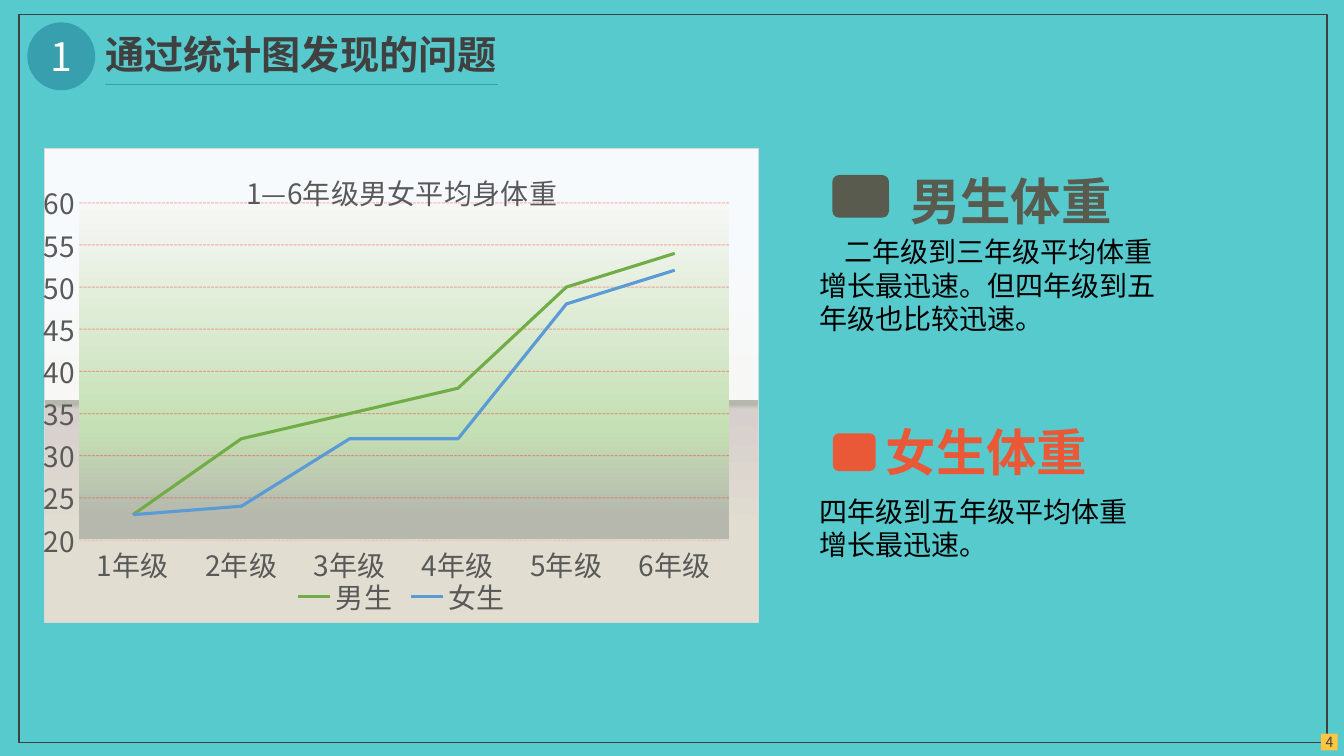
from lxml import etree
from pptx import Presentation
from pptx.chart.data import CategoryChartData as ChartData
from pptx.dml.color import RGBColor as RGB
from pptx.enum.chart import XL_CHART_TYPE as Kind, XL_LEGEND_POSITION as Spot, XL_TICK_MARK as Tick
from pptx.enum.dml import MSO_LINE as Dash
from pptx.enum.shapes import MSO_CONNECTOR as Wire, MSO_SHAPE as Form
from pptx.enum.text import MSO_ANCHOR as Anchor, PP_ALIGN as Align
from pptx.oxml import parse_xml
from pptx.oxml.ns import nsdecls, qn
from pptx.util import Pt

TEAL = RGB(0x57, 0xCA, 0xCD)
DEEP = RGB(0x38, 0x9F, 0xAE)
DARK = RGB(0x40, 0x40, 0x40)
GOLD = RGB(0xFD, 0xC5, 0x40)
MOSS = RGB(0x59, 0x5B, 0x4F)
CORAL = RGB(0xEA, 0x59, 0x37)
GRAY = RGB(0x59, 0x59, 0x59)
PALE = RGB(0xD9, 0xD9, 0xD9)
RED = RGB(0xFF, 0, 0)
GREEN = RGB(0x70, 0xAD, 0x47)
BLUE = RGB(0x5B, 0x9B, 0xD5)
BLACK = RGB(0, 0, 0)
WHITE = RGB(0xFF, 0xFF, 0xFF)
SANS = "Noto Sans CJK SC"
HEAD = "Noto Sans CJK JP"


def style(font, size, color, face=SANS, bold=False):
    font.size = Pt(size)
    font.bold = bold
    font.color.rgb = color
    font.name = face
    etree.SubElement(font._element, qn("a:ea")).set("typeface", face)


def draw(form, box, color):
    shape = slide.shapes.add_shape(form, *map(Pt, box))
    shape.shadow.inherit = False
    shape.line.fill.background()
    shape.fill.solid()
    shape.fill.fore_color.rgb = color
    return shape


deck = Presentation()
deck.slide_width, deck.slide_height = Pt(960), Pt(540)
slide = deck.slides.add_slide(deck.slide_layouts[5])
slide.background.fill.solid()
slide.background.fill.fore_color.rgb = TEAL

frame = draw(Form.RECTANGLE, (13.5, 10.5, 934.5, 520), TEAL)
frame.fill.background()
frame.line.color.rgb = DARK
frame.line.width = Pt(1)

title = slide.shapes.title
title.left, title.top, title.width, title.height = map(Pt, (67, 18, 296, 43))
text = title.text_frame
text.word_wrap = False
text.vertical_anchor = Anchor.TOP
para = text.paragraphs[0]
para.alignment = Align.CENTER
run = para.add_run()
run.text = "通过统计图发现的问题"
style(run.font, 28, DARK, HEAD, True)

badge = draw(Form.OVAL, (19.5, 16, 48.5, 48.5), DEEP)
rule = slide.shapes.add_connector(Wire.STRAIGHT, Pt(75), Pt(60.5), Pt(355.5), Pt(60.5))
rule.line.color.rgb = DEEP
rule.line.width = Pt(0.5)
etree.SubElement(rule._element.spPr, qn("a:effectLst"))

draw(Form.RECTANGLE, (943.5, 524, 12, 12), GOLD)
page = slide.shapes.add_textbox(Pt(934), Pt(524), Pt(31.5), Pt(12))
for shape, word, size, color in ((badge, "1", 28, WHITE), (page, "4", 10, DARK)):
    text = shape.text_frame
    text.margin_left = text.margin_right = text.margin_top = text.margin_bottom = 0
    text.vertical_anchor = Anchor.MIDDLE
    para = text.paragraphs[0]
    para.alignment = Align.CENTER
    run = para.add_run()
    run.text = word
    style(run.font, size, color)

notes = (
    ("男生体重", MOSS, (594.5, 125, 40.5, 30.5), (643, 118, 187, 53), (578, 164, 268.5, 79),
     "二年级到三年级平均体重增长最迅速。但四年级到五年级也比较迅速。", 18),
    ("女生体重", CORAL, (595, 309.5, 30.5, 27), (625.5, 297, 176, 53), (578, 349.5, 253.5, 55),
     "四年级到五年级平均体重增长最迅速。", 0),
)
for name, color, mark, top, body, words, indent in notes:
    chip = draw(Form.ROUNDED_RECTANGLE, mark, color)
    chip.adjustments[0] = 0.16
    for box, line, look, shift in (
        (top, name, (36, color, HEAD, True), 0),
        (body, words, (20, BLACK), indent),
    ):
        text = slide.shapes.add_textbox(*map(Pt, box)).text_frame
        text.word_wrap = True
        para = text.paragraphs[0]
        para._p.get_or_add_pPr().set("indent", str(Pt(shift)))
        run = para.add_run()
        run.text = line
        style(run.font, *look)

data = ChartData()
data.categories = [f"{year}年级" for year in range(1, 7)]
data.add_series("男生", (23, 32, 35, 38, 50, 54))
data.add_series("女生", (23, 24, 32, 32, 48, 52))
chart = slide.shapes.add_chart(Kind.LINE, Pt(31), Pt(106), Pt(511.5), Pt(339), data).chart
style(chart.font, 10, BLACK)

chart.has_title = True
run = chart.chart_title.text_frame.paragraphs[0].add_run()
run.text = "1—6年级男女平均身体重"
style(run.font, 20, GRAY)
chart.chart_title.include_in_layout = False

chart.has_legend = True
chart.legend.position = Spot.BOTTOM
chart.legend.include_in_layout = False
style(chart.legend.font, 20, GRAY)

years, kilos = chart.category_axis, chart.value_axis
for axis in (years, kilos):
    axis.major_tick_mark = axis.minor_tick_mark = Tick.NONE
    style(axis.tick_labels.font, 20, GRAY)
years.format.line.color.rgb = PALE
years.format.line.width = Pt(0.75)
kilos.format.line.fill.background()
kilos.minimum_scale, kilos.maximum_scale, kilos.major_unit = 20, 60, 5
grid = kilos.major_gridlines.format.line
grid.color.rgb = RED
grid.width = Pt(0.75)
grid.dash_style = Dash.SQUARE_DOT
tint = kilos.major_gridlines._xAx.find(".//" + qn("c:majorGridlines")).find(".//" + qn("a:srgbClr"))
etree.SubElement(tint, qn("a:alpha")).set("val", "29000")

plot = chart.plots[0]
plot.vary_by_categories = False
for line, color in zip(plot.series, (GREEN, BLUE)):
    line.smooth = False
    line.format.line.color.rgb = color
    line.format.line.width = Pt(2.25)

room = chart._chartSpace
area = room.find(".//" + qn("c:plotArea"))
for old in area.findall(qn("c:layout")):
    area.remove(old)
spots = "".join(f'<c:{key} val="{val}"/>' for key, val in (
    ("layoutTarget", "inner"), ("xMode", "edge"), ("yMode", "edge"),
    ("x", 0.048), ("y", 0.114), ("w", 0.91), ("h", 0.712)))
area.insert(0, parse_xml(
    f'<c:layout {nsdecls("c")}><c:manualLayout>{spots}</c:manualLayout></c:layout>'))

back = ((16, "F7FAFD"), (53, "F7F7F6"), (53, "B6B8AD"), (54, "B6B8AD"), (55, "D7CFCD"), (81, "E1DDD1"))
field = ((0, "F7F7F6"), (67, "C5E0B4"), (93, "B6B8AD"), (100, "B6B8AD"))
edge = f'<a:ln w="9525"><a:solidFill><a:srgbClr val="{PALE}"/></a:solidFill></a:ln>'
for host, stops, rim in ((room, back, edge), (area, field, "<a:ln><a:noFill/></a:ln>")):
    shades = "".join(
        f'<a:gs pos="{spot * 1000}"><a:srgbClr val="{tone}"/></a:gs>' for spot, tone in stops)
    skin = parse_xml(
        f'<c:spPr {nsdecls("c", "a")}><a:gradFill><a:gsLst>{shades}</a:gsLst>'
        f'<a:lin ang="5400000" scaled="0"/></a:gradFill>{rim}</c:spPr>')
    if host is room:
        room.find(qn("c:chart")).addnext(skin)
    else:
        area.append(skin)

deck.save("out.pptx")
